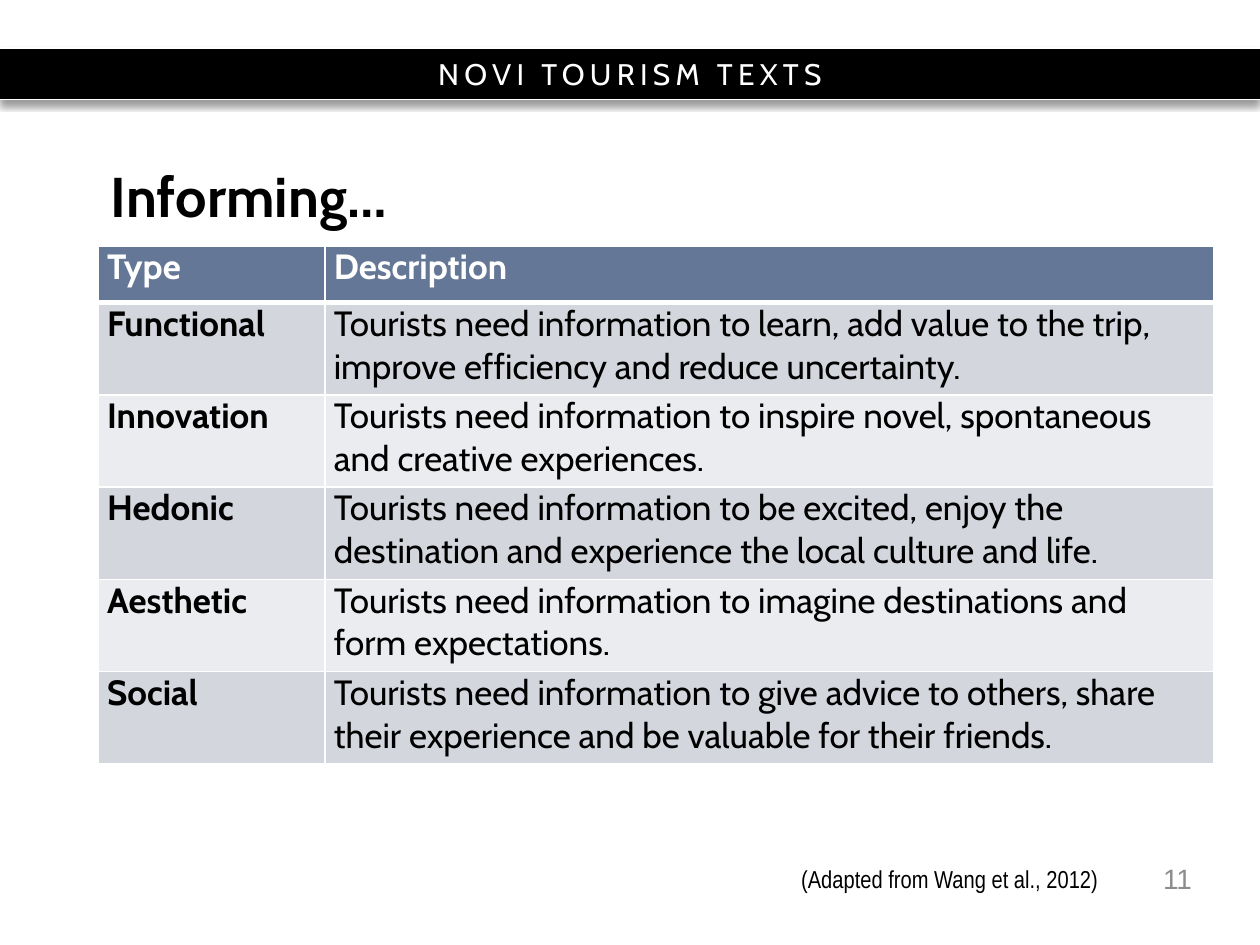
from dataclasses import dataclass

from lxml.etree import SubElement as Sub
from pptx import Presentation
from pptx.dml.color import RGBColor
from pptx.enum.shapes import MSO_CONNECTOR as Link, MSO_SHAPE as Shape
from pptx.enum.text import MSO_ANCHOR as Anchor, MSO_AUTO_SIZE as Fit, PP_ALIGN as Align
from pptx.oxml import parse_xml
from pptx.oxml.ns import nsdecls, qn
from pptx.util import Cm, Pt

BLACK = RGBColor(0, 0, 0)
WHITE = RGBColor(255, 255, 255)
GREY = RGBColor(0x8C, 0x8C, 0x8C)
BLUE = RGBColor(0x65, 0x77, 0x97)
DARK = RGBColor(0xD3, 0xD6, 0xDD)
PALE = RGBColor(0xEA, 0xEC, 0xEF)


@dataclass
class Style:
    size: float
    color: RGBColor = BLACK
    bold: bool = False
    font: str = "Cabin"


@dataclass
class Row:
    kind: str
    text: str


@dataclass
class Note:
    text: str
    box: tuple
    style: Style
    align: Align
    anchor: Anchor
    wrap: bool


ROWS = [
    Row("Type", "Description"),
    Row("Functional", "Tourists need information to learn, add value to the trip, "
        "improve efficiency and reduce uncertainty."),
    Row("Innovation", "Tourists need information to inspire novel, spontaneous "
        "and creative experiences."),
    Row("Hedonic", "Tourists need information to be excited, enjoy the "
        "destination and experience the local culture and life."),
    Row("Aesthetic", "Tourists need information to imagine destinations and "
        "form expectations."),
    Row("Social", "Tourists need information to give advice to others, share "
        "their experience and be valuable for their friends."),
]
NOTES = [
    Note("11", (18.36, 17.2, 5.92, 1.02), Style(16, GREY, font="Arial"),
         Align.RIGHT, Anchor.MIDDLE, True),
    Note("(Adapted from Wang et al., 2012)", (15.9, 17.3, 6.55, 0.86),
         Style(14, font="Arial Narrow"), Align.LEFT, Anchor.TOP, False),
]


def add_run(par, text: str, style: Style):
    run = par.add_run()
    run.text = text
    font = run.font
    font.name, font.size, font.bold = style.font, Pt(style.size), style.bold
    font.color.rgb = style.color
    return run


def add_rule(slide, y: float) -> None:
    line = slide.shapes.add_connector(Link.STRAIGHT, 0, Cm(y), Cm(25.4), Cm(y))
    line.line.color.rgb = WHITE
    line.line.width = Pt(0.75)
    Sub(line._element.spPr, qn("a:effectLst"))


def add_banner(slide) -> None:
    top, tall = 0.97, 1.03
    bar = slide.shapes.add_shape(Shape.RECTANGLE, 0, Cm(top), Cm(25.4), Cm(tall))
    bar.fill.solid()
    bar.fill.fore_color.rgb = BLACK
    bar.line.fill.background()
    bar._element.spPr.append(parse_xml(
        f'<a:effectLst {nsdecls("a")}><a:outerShdw blurRad="{Pt(4)}" '
        f'dist="{Pt(3)}" dir="5400000" rotWithShape="0"><a:srgbClr val="{BLACK}">'
        '<a:alpha val="40000"/></a:srgbClr></a:outerShdw></a:effectLst>'))
    frame = bar.text_frame
    frame.vertical_anchor = Anchor.MIDDLE
    par = frame.paragraphs[0]
    par.alignment = Align.CENTER
    run = add_run(par, "NOVI TOURISM TEXTS", Style(17, WHITE))
    run.font._element.set("spc", "300")
    for y in (top, top + tall):
        add_rule(slide, y)


def add_title(slide) -> None:
    title = slide.shapes.title
    title.left, title.top, title.width, title.height = map(Cm, (1.98, 3.43, 21.67, 1.22))
    frame = title.text_frame
    frame.auto_size = Fit.NONE
    frame.vertical_anchor = Anchor.MIDDLE
    par = frame.paragraphs[0]
    par.alignment = Align.LEFT
    par.line_spacing = Pt(32)
    add_run(par, "Informing…", Style(32, bold=True))


def set_edges(cell, top: float, base: float) -> None:
    props = cell._tc.get_or_add_tcPr()
    for i, (side, width) in enumerate((("L", 1), ("R", 1), ("T", top), ("B", base))):
        props.insert(i, parse_xml(
            f'<a:ln{side} {nsdecls("a")} w="{Pt(width)}"><a:solidFill>'
            f'<a:srgbClr val="{WHITE}"/></a:solidFill></a:ln{side}>'))


def fill_cell(cell, text: str, style: Style, fill: RGBColor) -> None:
    cell.margin_left = cell.margin_right = Cm(0.18)
    cell.margin_top = cell.margin_bottom = 0
    cell.fill.solid()
    cell.fill.fore_color.rgb = fill
    par = cell.text_frame.paragraphs[0]
    par.space_before = par.space_after = Pt(1)
    add_run(par, text, style)


def add_grid(slide) -> None:
    grid = slide.shapes.add_table(
        len(ROWS), 2, Cm(1.98), Cm(4.96), Cm(22.48), Cm(10.44)).table
    for col, width in zip(grid.columns, (4.57, 17.91)):
        col.width = Cm(width)
    for i, row in enumerate(ROWS):
        head = i == 0
        grid.rows[i].height = Cm(1.14 if head else 1.86)
        fill = BLUE if head else DARK if i % 2 else PALE
        for j, text in enumerate((row.kind, row.text)):
            cell = grid.cell(i, j)
            style = Style(20, WHITE if head else BLACK, head or j == 0)
            fill_cell(cell, text, style, fill)
            set_edges(cell, 3 if i == 1 else 1, 3 if head else 1)


def add_note(slide, note: Note) -> None:
    frame = slide.shapes.add_textbox(*map(Cm, note.box)).text_frame
    frame.word_wrap = note.wrap
    frame.auto_size = Fit.NONE if note.wrap else Fit.SHAPE_TO_FIT_TEXT
    frame.vertical_anchor = note.anchor
    par = frame.paragraphs[0]
    par.alignment = note.align
    add_run(par, note.text, note.style)


def main() -> None:
    deck = Presentation()
    deck.slide_width, deck.slide_height = Cm(25.4), Cm(19.05)
    slide = deck.slides.add_slide(deck.slide_layouts[5])
    add_banner(slide)
    add_grid(slide)
    add_title(slide)
    for note in NOTES:
        add_note(slide, note)
    deck.save("out.pptx")


if __name__ == "__main__":
    main()
